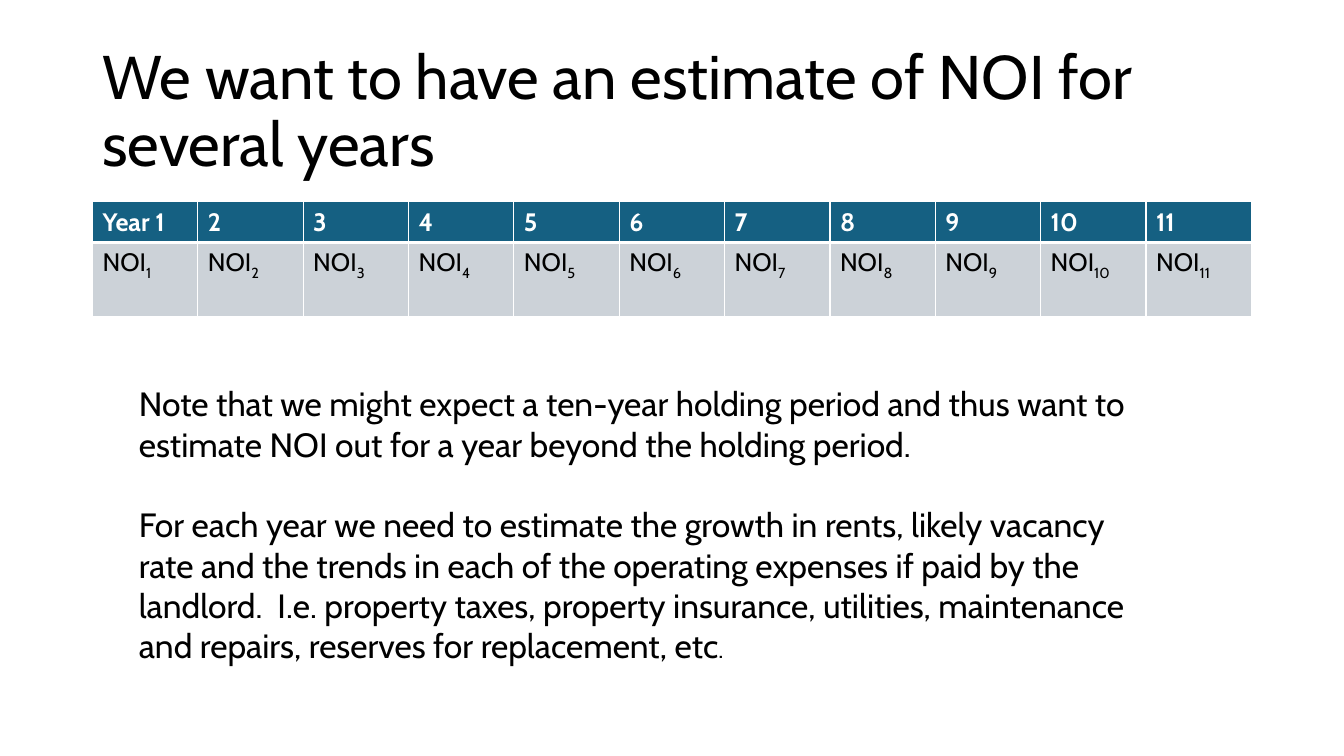
"""Build the slide that lays out NOI estimates over eleven years."""
from lxml.etree import SubElement
from pptx import Presentation
from pptx.dml.color import RGBColor
from pptx.enum.text import MSO_ANCHOR
from pptx.oxml.ns import qn
from pptx.util import Cm, Pt

TITLE = "We want to have an estimate of NOI for several years"
YEARS = ["Year 1"] + [str(n) for n in range(2, 12)]
NOTES = [
    [("Note that we might expect a ten-year holding period and thus want to "
      "estimate NOI out for a year beyond the holding period.", "note")],
    [("For each year we need to estimate the growth in rents, likely vacancy "
      "rate and the trends in each of the operating expenses if paid by the "
      "landlord.  I.e. property taxes, property insurance, utilities, "
      "maintenance and repairs, reserves for replacement, etc", "note"),
     (".", "cell")],
]
THEME = {
    "font": "Cabin",
    "size": {"title": 44, "note": 24, "cell": 18},
    "ink": "000000", "white": "FFFFFF", "header": "156082", "body": "CCD2D8",
}
LEFT, WIDTH = 2.33, 29.21
ROW_HEIGHTS = [1.03, 1.88]


def add_run(p, text, size, color=THEME["ink"], bold=False):
    r = p.add_run()
    r.text = text
    r.font.name = THEME["font"]
    r.font.size = Pt(THEME["size"][size])
    r.font.color.rgb = RGBColor.from_string(color)
    r.font.bold = bold
    return r


def add_text_box(s, x, y, w, h):
    tf = s.shapes.add_textbox(Cm(x), Cm(y), Cm(w), Cm(h)).text_frame
    tf.word_wrap = True
    return tf


def style_cell(cell, fill, top, bottom):
    tc_pr = cell._tc.get_or_add_tcPr()
    for side, width in (("L", 1), ("R", 1), ("T", top), ("B", bottom)):
        ln = SubElement(tc_pr, qn(f"a:ln{side}"), w=str(Pt(width)))
        SubElement(SubElement(ln, qn("a:solidFill")), qn("a:srgbClr"),
                   val=THEME["white"])
    cell.fill.solid()
    cell.fill.fore_color.rgb = RGBColor.from_string(fill)


def add_title(s):
    tf = add_text_box(s, LEFT, 1.01, WIDTH, 3.68)
    tf.vertical_anchor = MSO_ANCHOR.MIDDLE
    p = tf.paragraphs[0]
    p.line_spacing = 0.9
    add_run(p, TITLE, "title")


def add_noi_table(s):
    table = s.shapes.add_table(2, len(YEARS), Cm(LEFT), Cm(5.08), Cm(WIDTH),
                               Cm(sum(ROW_HEIGHTS))).table
    for row, height in zip(table.rows, ROW_HEIGHTS):
        row.height = Cm(height)
    for i, year in enumerate(YEARS):
        table.columns[i].width = Cm(WIDTH / len(YEARS))
        head, noi = table.cell(0, i), table.cell(1, i)
        style_cell(head, THEME["header"], 1, 3)
        style_cell(noi, THEME["body"], 3, 1)
        add_run(head.text_frame.paragraphs[0], year, "cell", THEME["white"], True)
        p = noi.text_frame.paragraphs[0]
        add_run(p, "NOI", "cell")
        index = add_run(p, str(i + 1), "cell")
        index.font._element.set("baseline", "-25000")


def add_notes(s):
    tf = add_text_box(s, 3.25, 9.53, 25.93, 7.44)
    for i, note in enumerate(NOTES):
        p = tf.add_paragraph() if i else tf.paragraphs[0]
        if i:
            p.space_before = Pt(29)
        for text, size in note:
            add_run(p, text, size)


def main():
    prs = Presentation()
    prs.slide_width, prs.slide_height = Cm(33.87), Cm(19.05)
    s = prs.slides.add_slide(prs.slide_layouts[6])
    add_title(s)
    add_noi_table(s)
    add_notes(s)
    prs.save("out.pptx")


if __name__ == "__main__":
    main()
